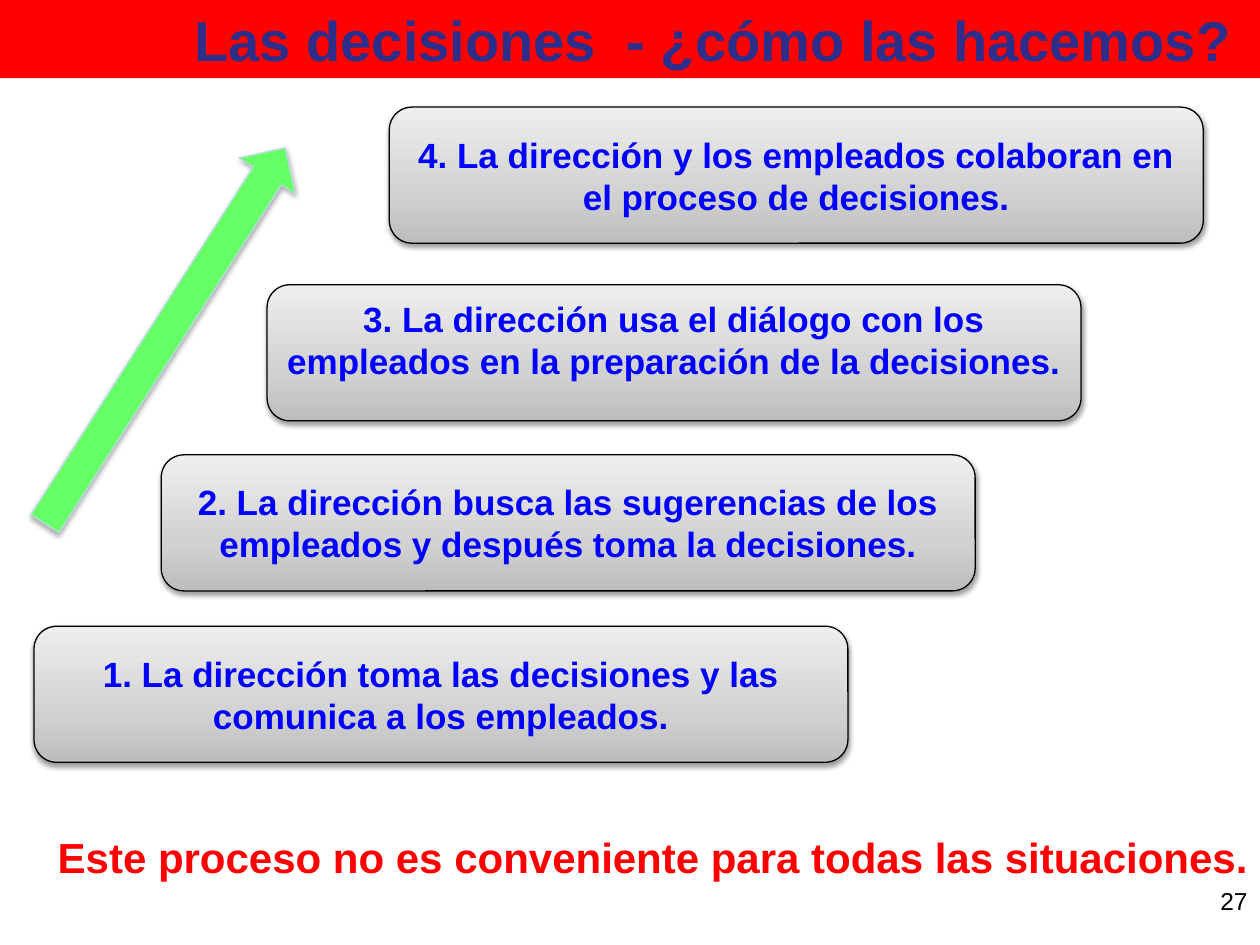
from copy import deepcopy

from lxml.etree import SubElement
from pptx import Presentation
from pptx.dml.color import RGBColor
from pptx.enum.shapes import MSO_SHAPE
from pptx.enum.text import MSO_ANCHOR, PP_ALIGN
from pptx.oxml.ns import qn
from pptx.util import Inches, Pt

# Content
TITLE = "Las decisiones  - ¿cómo las hacemos?"
CONCLUSION = "Este proceso no es conveniente para todas las situaciones."
PAGE_NUMBER = "27"
# Steps from the lowest up: text, left, top, vertical anchor
STEPS = [
    ("1. La dirección toma las decisiones y las comunica a los empleados.",
     0.27, 4.97, MSO_ANCHOR.MIDDLE),
    ("2. La dirección busca las sugerencias de los empleados y después toma la decisiones.",
     1.28, 3.61, MSO_ANCHOR.MIDDLE),
    ("3. La dirección usa el diálogo con los empleados en la preparación de la decisiones.",
     2.12, 2.26, MSO_ANCHOR.TOP),
    ("4. La dirección y los empleados colaboran en\vel proceso de decisiones.",
     3.09, 0.85, MSO_ANCHOR.MIDDLE),
]
STEP_WIDTH, STEP_HEIGHT = 6.46, 1.08

# Colours
RED = RGBColor(0xFF, 0x00, 0x00)
NAVY = RGBColor(0x2D, 0x2D, 0x8A)
BLUE = RGBColor(0x00, 0x00, 0xFF)
BLACK = RGBColor(0x00, 0x00, 0x00)
GREEN = RGBColor(0x66, 0xFF, 0x66)
PALE_TEAL = RGBColor(0xB6, 0xDC, 0xDF)
GREYS = [(0, RGBColor(0xBD, 0xBD, 0xBD)),
         (0.35, RGBColor(0xD1, 0xD1, 0xD1)),
         (1, RGBColor(0xEE, 0xEE, 0xEE))]


def write(shape, text, size, color, align, bold=True, anchor=MSO_ANCHOR.TOP, wrap=True):
    frame = shape.text_frame
    frame.word_wrap = wrap
    frame.vertical_anchor = anchor
    paragraph = frame.paragraphs[0]
    paragraph.text = text
    paragraph.alignment = align
    font = paragraph.font
    font.name, font.size, font.bold = "Arial", Pt(size), bold
    font.color.rgb = color


def add_shape(kind, left, top, width, height):
    shape = slide.shapes.add_shape(
        kind, Inches(left), Inches(top), Inches(width), Inches(height))
    shape.shadow.inherit = False
    return shape


def add_text(left, top, width, height):
    return slide.shapes.add_textbox(
        Inches(left), Inches(top), Inches(width), Inches(height))


def outline(shape, color):
    shape.line.color.rgb = color
    shape.line.width = Pt(0.75)


def cast_shadow(shape, distance, opacity):
    effects = shape._element.spPr.find(qn("a:effectLst"))
    shadow = SubElement(effects, qn("a:outerShdw"), blurRad=str(Pt(3.1)),
                        dist=str(Pt(distance)), dir="5400000", rotWithShape="0")
    color = SubElement(shadow, qn("a:srgbClr"), val="000000")
    SubElement(color, qn("a:alpha"), val=str(opacity * 1000))


def fill_grey_gradient(shape):
    fill = shape.fill
    fill.gradient()
    fill.gradient_angle = 90
    stop_list = shape._element.spPr.find(qn("a:gradFill")).find(qn("a:gsLst"))
    stop_list.insert(1, deepcopy(stop_list[0]))
    for stop, (position, color) in zip(fill.gradient_stops, GREYS):
        stop.position = position
        stop.color.rgb = color


presentation = Presentation()
presentation.slide_width, presentation.slide_height = Inches(10), Inches(7.5)
slide = presentation.slides.add_slide(presentation.slide_layouts[6])

# Title band
title = add_shape(MSO_SHAPE.RECTANGLE, 0, 0, 10, 0.62)
title.fill.solid()
title.fill.fore_color.rgb = RED
title.line.fill.background()
write(title, TITLE, 32, NAVY, PP_ALIGN.RIGHT, anchor=MSO_ANCHOR.MIDDLE)
title.text_frame.margin_right = Inches(0.22)

# Page number
write(add_text(7.67, 6.98, 2.33, 0.52), PAGE_NUMBER, 14, BLACK, PP_ALIGN.RIGHT, bold=False)

# Staircase of steps
for text, left, top, anchor in STEPS:
    step = add_shape(MSO_SHAPE.ROUNDED_RECTANGLE, left, top, STEP_WIDTH, STEP_HEIGHT)
    fill_grey_gradient(step)
    outline(step, BLACK)
    cast_shadow(step, 1.6, 38)
    write(step, text, 20, BLUE, PP_ALIGN.CENTER, anchor=anchor)

# Rising arrow
arrow = add_shape(MSO_SHAPE.LEFT_ARROW, -0.46, 2.4, 3.54, 0.53)
arrow.rotation = 122.6
arrow.fill.solid()
arrow.fill.fore_color.rgb = GREEN
outline(arrow, PALE_TEAL)
cast_shadow(arrow, 1.8, 35)

# Conclusion
write(add_text(0.36, 6.55, 9.74, 0.5), CONCLUSION, 24, RED, PP_ALIGN.LEFT, wrap=False)

presentation.save("out.pptx")
